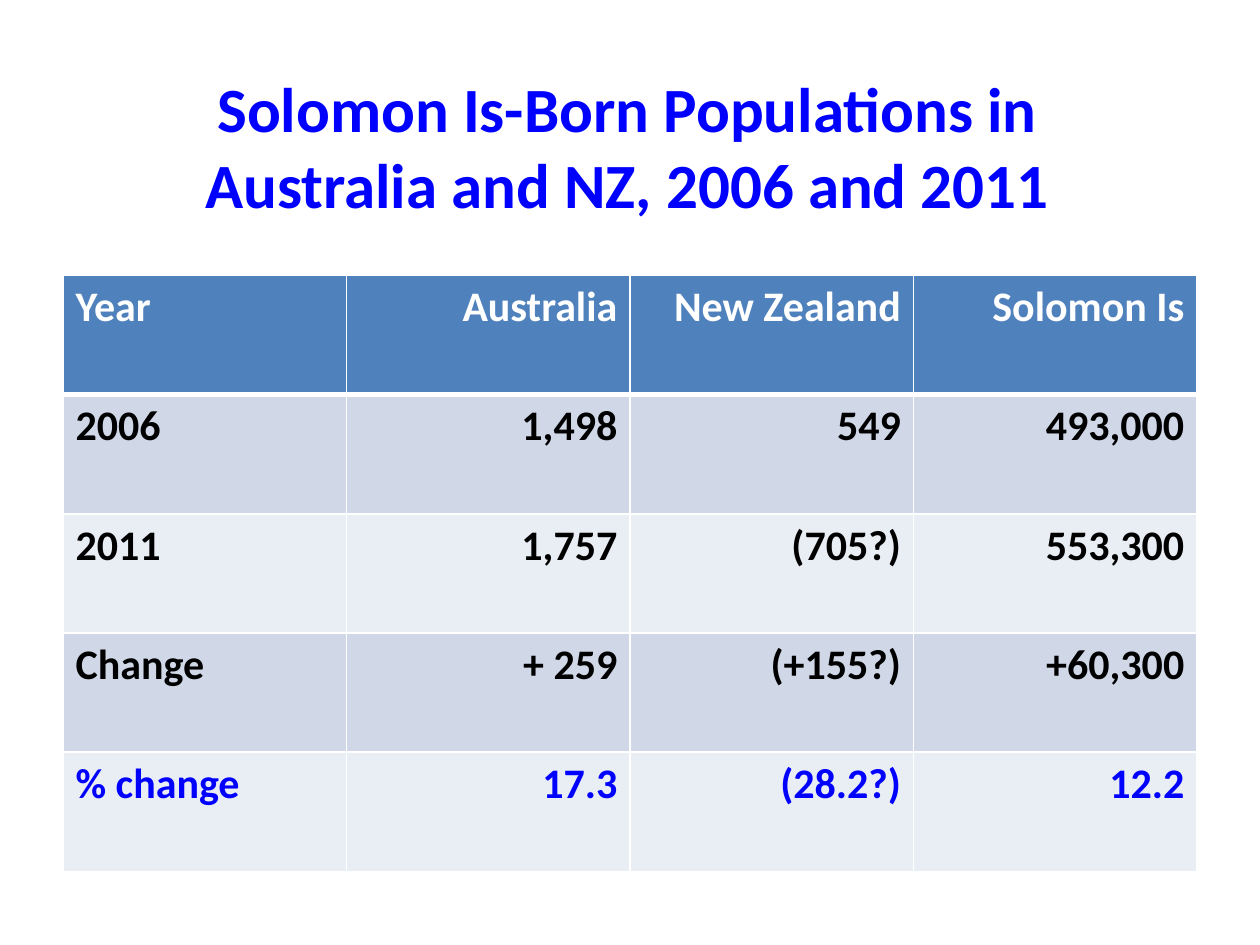
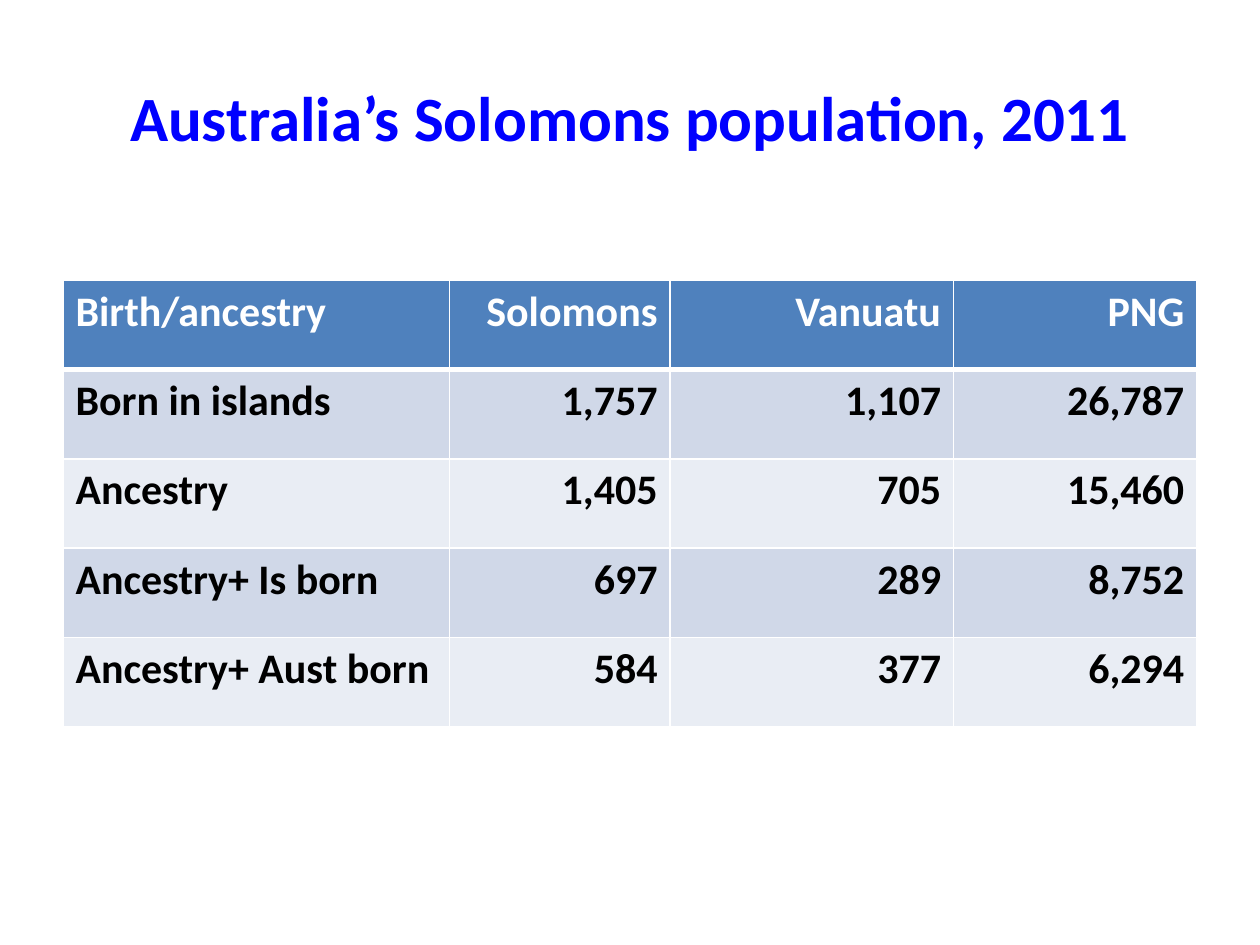
from lxml import etree
from pptx import Presentation
from pptx.dml.color import RGBColor
from pptx.enum.text import MSO_ANCHOR, MSO_AUTO_SIZE, PP_ALIGN
from pptx.oxml.ns import qn
from pptx.util import Pt

LEFT, CENTER, RIGHT = PP_ALIGN.LEFT, PP_ALIGN.CENTER, PP_ALIGN.RIGHT
MIDDLE = MSO_ANCHOR.MIDDLE
NO_AUTOFIT = MSO_AUTO_SIZE.NONE

FONT = "Calibri"
COLORS = {
    "accent": "0000FF",
    "header": "4F81BD",
    "band_dark": "D0D8E8",
    "band_light": "E9EDF4",
    "white": "FFFFFF",
    "black": "000000",
}
TITLE_ONLY = 5
TABLE_LEFT = 36

BORN_ROWS = [
    ["Year", "Australia", "New Zealand", "Solomon Is"],
    ["2006", "1,498", "549", "493,000"],
    ["2011", "1,757", "(705?)", "553,300"],
    ["Change", "+ 259", "(+155?)", "+60,300"],
    ["% change", "17.3", "(28.2?)", "12.2"],
]
ANCESTRY_ROWS = [
    ["Birth/ancestry", "Solomons", "Vanuatu", "PNG"],
    ["Born in islands", "1,757", "1,107", "26,787"],
    ["Ancestry", "1,405", "705", "15,460"],
    ["Ancestry+ Is born", "697", "289", "8,752"],
    ["Ancestry+ Aust born", "584", "377", "6,294"],
]


def rgb(name):
    return RGBColor.from_string(COLORS[name])


def write_text(frame, text, size, color, align):
    """Fill the first paragraph with one bold span."""
    para = frame.paragraphs[0]
    para.alignment = align
    span = para.add_run()
    span.text = text
    span.font.name = FONT
    span.font.size = Pt(size)
    span.font.bold = True
    span.font.color.rgb = rgb(color)


def add_titled_slide(deck, title, left, top, width, height):
    page = deck.slides.add_slide(deck.slide_layouts[TITLE_ONLY])
    box = page.shapes.title
    box.left, box.top, box.width, box.height = map(Pt, (left, top, width, height))
    frame = box.text_frame
    frame.word_wrap = True
    frame.auto_size = NO_AUTOFIT
    frame.vertical_anchor = MIDDLE
    write_text(frame, title, 36, "accent", CENTER)
    return page


def set_borders(cell, widths):
    """Draw white cell borders; widths are given by side tag."""
    properties = cell._tc.get_or_add_tcPr()
    for side, width in widths.items():
        line = etree.SubElement(properties, qn(f"a:{side}"), w=str(Pt(width)))
        fill = etree.SubElement(line, qn("a:solidFill"))
        etree.SubElement(fill, qn("a:srgbClr"), val=COLORS["white"])


def add_data_table(page, rows, top, column_widths, row_height, accent_row=None):
    frame = page.shapes.add_table(
        len(rows), len(column_widths), Pt(TABLE_LEFT), Pt(top),
        Pt(sum(column_widths)), Pt(row_height * len(rows)))
    table = frame.table
    for column, width in zip(table.columns, column_widths):
        column.width = Pt(width)

    for r, values in enumerate(rows):
        table.rows[r].height = Pt(row_height)
        # Header first, then alternating bands
        if r == 0:
            fill, color = "header", "white"
        else:
            fill = "band_dark" if r % 2 else "band_light"
            color = "accent" if r == accent_row else "black"
        borders = {"lnL": 1, "lnR": 1,
                   "lnT": 3 if r == 1 else 1, "lnB": 3 if r == 0 else 1}
        for c, value in enumerate(values):
            cell = table.cell(r, c)
            set_borders(cell, borders)
            cell.fill.solid()
            cell.fill.fore_color.rgb = rgb(fill)
            write_text(cell.text_frame, value, 24, color, RIGHT if c else LEFT)


def main():
    deck = Presentation()
    deck.slide_width, deck.slide_height = Pt(720), Pt(540)

    # Born populations in the two countries
    page = add_titled_slide(
        deck, "Solomon Is-Born Populations in Australia and NZ, 2006 and 2011",
        60, 42, 597, 82)
    add_data_table(page, BORN_ROWS, 157.5, [162] * 4, 68.1, accent_row=4)

    # Birth and ancestry in Australia
    page = add_titled_slide(
        deck, "Australia’s Solomons population, 2011", 36, 21.6, 648, 90)
    add_data_table(page, ANCESTRY_ROWS, 160, [221, 126, 162, 139], 51.1)

    deck.save("out.pptx")


if __name__ == "__main__":
    main()
